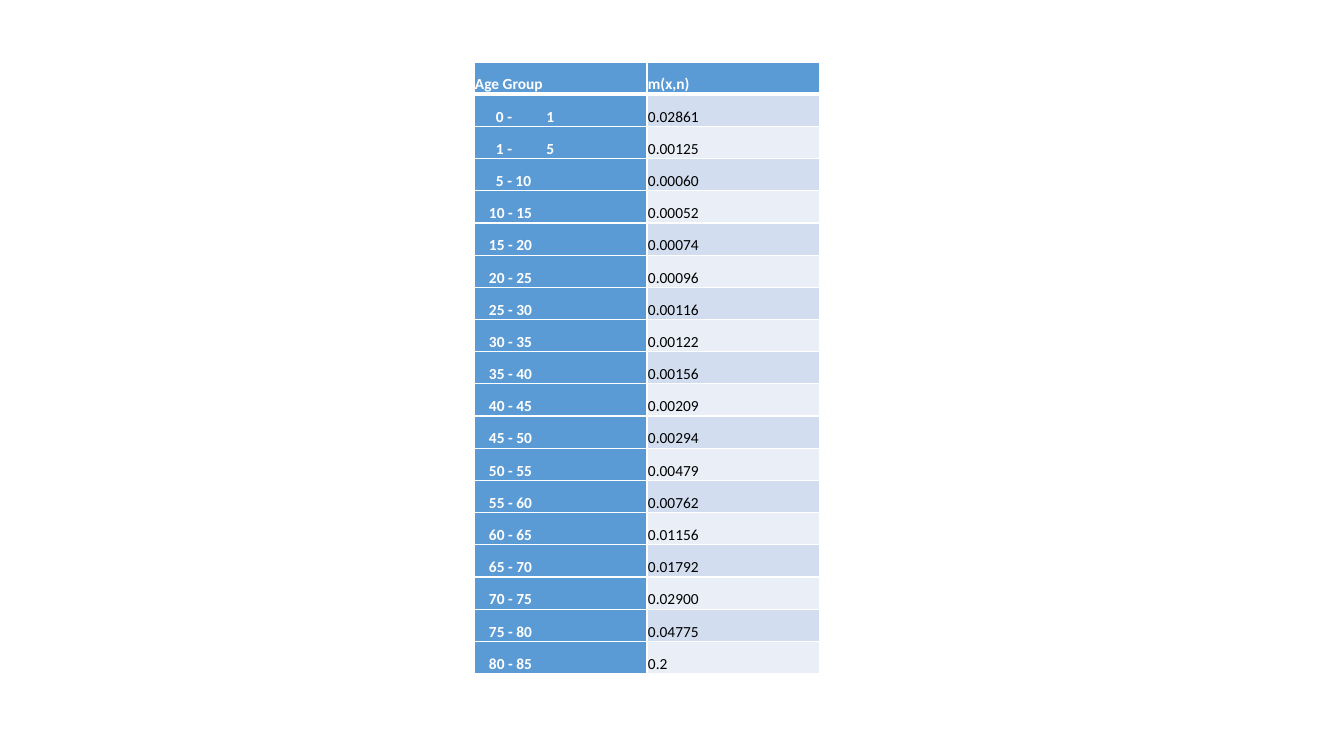
from dataclasses import dataclass

from lxml.etree import SubElement
from pptx import Presentation
from pptx.dml.color import RGBColor
from pptx.enum.text import MSO_ANCHOR
from pptx.oxml.ns import qn
from pptx.table import _Cell
from pptx.util import Emu, Pt

SLIDE_WIDTH, SLIDE_HEIGHT = 1344, 756
EMU_PER_PX = 12192000 / SLIDE_WIDTH
COLORS = {
    "header": "5B9BD5",
    "band_dark": "D2DEEF",
    "band_light": "EAEFF7",
    "white": "FFFFFF",
    "black": "000000",
}
AGE_BOUNDS = [0, 1, *range(5, 90, 5)]
DEATH_RATES = [
    "0.02861", "0.00125", "0.00060", "0.00052", "0.00074", "0.00096",
    "0.00116", "0.00122", "0.00156", "0.00209", "0.00294", "0.00479",
    "0.00762", "0.01156", "0.01792", "0.02900", "0.04775", "0.2",
]
ONE_DIGIT_INDENT, TWO_DIGIT_INDENT = 21, 14
UPPER_AGE_TAB = 47
THIN, THICK = 1, 3


def px(length: int) -> Emu:
    return Emu(round(length * EMU_PER_PX))


@dataclass
class CellLook:
    text: str
    fill: str
    ink: str = "white"
    bold: bool = True
    indent: int = 0
    top_line: int = THIN
    bottom_line: int = THIN


def age_cell(start: int, end: int, top_line: int) -> CellLook:
    """Describe an age range, with a one-digit upper age lined up by a tab."""
    gap = "\t" if end < 10 else " "
    indent = ONE_DIGIT_INDENT if start < 10 else TWO_DIGIT_INDENT
    return CellLook(f"{start} -{gap}{end}", "header", indent=indent, top_line=top_line)


def table_rows() -> list[list[CellLook]]:
    rows = [[CellLook(title, "header", bottom_line=THICK) for title in ("Age Group", "m(x,n)")]]
    age_ranges = zip(AGE_BOUNDS, AGE_BOUNDS[1:])
    for index, ((start, end), rate) in enumerate(zip(age_ranges, DEATH_RATES)):
        top_line = THICK if index == 0 else THIN
        band = "band_light" if index % 2 else "band_dark"
        rate_cell = CellLook(rate, band, "black", bold=False, top_line=top_line)
        rows.append([age_cell(start, end, top_line), rate_cell])
    return rows


def set_borders(cell: _Cell, look: CellLook) -> None:
    widths = {"lnL": THIN, "lnR": THIN, "lnT": look.top_line, "lnB": look.bottom_line}
    properties = cell._tc.get_or_add_tcPr()
    for side, width in widths.items():
        line = SubElement(properties, qn(f"a:{side}"), w=str(Pt(width)))
        fill = SubElement(line, qn("a:solidFill"))
        SubElement(fill, qn("a:srgbClr"), val=COLORS["white"])


def set_indent(cell: _Cell, look: CellLook) -> None:
    properties = cell.text_frame.paragraphs[0]._p.get_or_add_pPr()
    properties.set("marL", str(px(look.indent)))
    properties.set("indent", "0")
    if "\t" in look.text:
        tabs = SubElement(properties, qn("a:tabLst"))
        SubElement(tabs, qn("a:tab"), pos=str(px(UPPER_AGE_TAB)), algn="l")


def draw_cell(cell: _Cell, look: CellLook) -> None:
    cell_format = {
        "vertical_anchor": MSO_ANCHOR.BOTTOM,
        "margin_left": px(1),
        "margin_top": px(1),
        "margin_right": px(1),
        "margin_bottom": 0,
    }
    for name, value in cell_format.items():
        setattr(cell, name, value)
    set_borders(cell, look)
    cell.fill.solid()
    cell.fill.fore_color.rgb = RGBColor.from_string(COLORS[look.fill])

    para = cell.text_frame.paragraphs[0]
    para.line_spacing = 1.15
    set_indent(cell, look)
    span = para.add_run()
    span.text = look.text
    for name, value in {"name": "Calibri", "size": Pt(11), "bold": look.bold}.items():
        setattr(span.font, name, value)
    span.font.color.rgb = RGBColor.from_string(COLORS[look.ink])


def main() -> None:
    deck = Presentation()
    deck.slide_width, deck.slide_height = px(SLIDE_WIDTH), px(SLIDE_HEIGHT)
    page = deck.slides.add_slide(deck.slide_layouts[6])
    rows = table_rows()
    frame = page.shapes.add_table(len(rows), 2, px(474), px(62), px(346), px(612))
    for row_index, row in enumerate(rows):
        for column_index, look in enumerate(row):
            draw_cell(frame.table.cell(row_index, column_index), look)
    deck.save("out.pptx")


if __name__ == "__main__":
    main()
